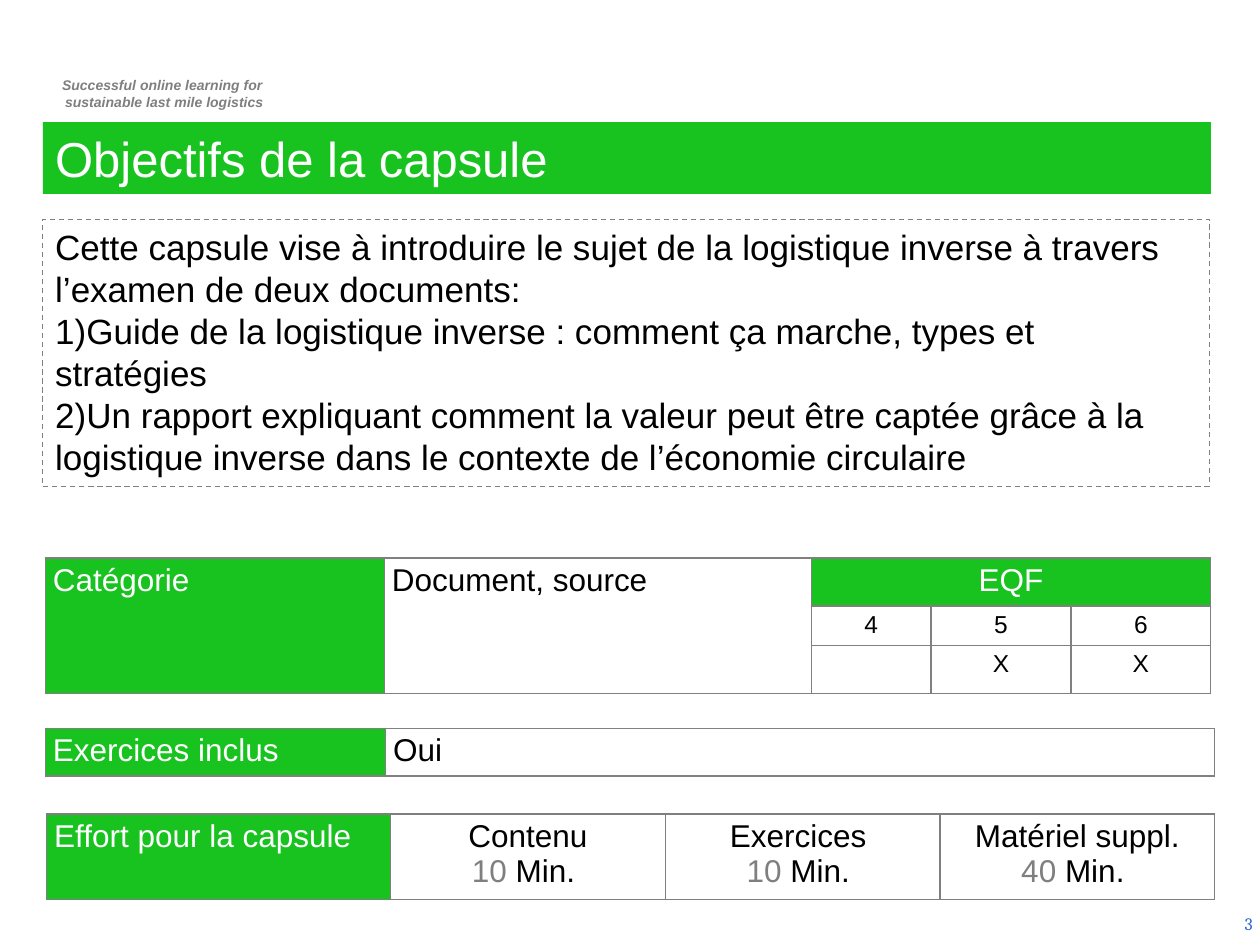
from dataclasses import dataclass

from lxml.etree import SubElement
from pptx import Presentation
from pptx.dml.color import RGBColor
from pptx.enum.dml import MSO_LINE
from pptx.enum.shapes import MSO_SHAPE
from pptx.enum.text import MSO_ANCHOR, PP_ALIGN
from pptx.oxml.ns import qn
from pptx.util import Inches, Pt


@dataclass(frozen=True)
class Theme:
    green: str = "18C320"
    white: str = "FFFFFF"
    black: str = "000000"
    gray: str = "808080"
    muted: str = "7F7F7F"
    blue: str = "3366CC"
    font: str = "Arial"
    number_font: str = "Cambria"
    title: int = 28
    body: int = 20
    cell: int = 18
    small_cell: int = 14
    number: int = 10
    tagline: int = 8


THEME = Theme()


def write_text(frame, paragraphs, size=THEME.cell, color=THEME.black, font=THEME.font,
               align=PP_ALIGN.LEFT, anchor=MSO_ANCHOR.TOP, bold=False, italic=False):
    """Each paragraph is a string or a list of (text, color) runs."""
    frame.word_wrap = True
    frame.vertical_anchor = anchor
    for index, content in enumerate(paragraphs):
        paragraph = frame.add_paragraph() if index else frame.paragraphs[0]
        paragraph.alignment = align
        runs = [(content, color)] if isinstance(content, str) else content
        for text, run_color in runs:
            run = paragraph.add_run()
            run.text = text
            run.font.name = font
            run.font.size = Pt(size)
            run.font.bold = bold
            run.font.italic = italic
            run.font.color.rgb = RGBColor.from_string(run_color)


class SlideBuilder:
    def __init__(self, slide, theme):
        self.slide = slide
        self.theme = theme

    def text(self, box, paragraphs, **text_format):
        shape = self.slide.shapes.add_textbox(*map(Inches, box))
        write_text(shape.text_frame, paragraphs, **text_format)

    def rectangle(self, box, paragraphs, fill=None, dashed=False, **text_format):
        shape = self.slide.shapes.add_shape(MSO_SHAPE.RECTANGLE, *map(Inches, box))
        shape.shadow.inherit = False
        if fill:
            shape.fill.solid()
            shape.fill.fore_color.rgb = RGBColor.from_string(fill)
        else:
            shape.fill.background()
        if dashed:
            shape.line.color.rgb = RGBColor.from_string(self.theme.gray)
            shape.line.width = Pt(0.75)
            shape.line.dash_style = MSO_LINE.DASH
        else:
            shape.line.fill.background()
        write_text(shape.text_frame, paragraphs, **text_format)

    def table(self, left, top, columns, rows, border):
        frame = self.slide.shapes.add_table(
            len(rows), len(columns), Inches(left), Inches(top),
            Inches(sum(columns)), Inches(sum(rows)))
        table = frame.table
        table.first_row = table.horz_banding = False
        for column, width in zip(table.columns, columns):
            column.width = Inches(width)
        for row, height in zip(table.rows, rows):
            row.height = Inches(height)
        for cell in table.iter_cells():
            cell.margin_left = cell.margin_right = Inches(0.06)
            cell.margin_top = cell.margin_bottom = Inches(0.04)
            self.borders(cell, border)
            cell.fill.background()
        return table

    def borders(self, cell, color):
        properties = cell._tc.get_or_add_tcPr()
        for side in ("a:lnL", "a:lnR", "a:lnT", "a:lnB"):
            line = SubElement(properties, qn(side), w=str(Pt(1)))
            fill = SubElement(line, qn("a:solidFill"))
            SubElement(fill, qn("a:srgbClr"), val=color)

    def cell(self, cell, paragraphs, **text_format):
        write_text(cell.text_frame, paragraphs, **text_format)

    def label(self, cell, text, **text_format):
        cell.fill.solid()
        cell.fill.fore_color.rgb = RGBColor.from_string(self.theme.green)
        self.cell(cell, [text], color=self.theme.white, **text_format)


def main():
    presentation = Presentation()
    presentation.slide_width = Inches(10)
    presentation.slide_height = Inches(7.5)
    slide = presentation.slides.add_slide(presentation.slide_layouts[6])
    builder = SlideBuilder(slide, THEME)

    # Tagline and slide number
    builder.text((0.29, 0.56, 2.03, 0.37),
                 ["Successful online learning for ", "sustainable last mile logistics"],
                 size=THEME.tagline, color=THEME.muted, bold=True, italic=True,
                 align=PP_ALIGN.CENTER)
    builder.text((7.71, 7.13, 2.33, 0.4), ["3"], size=THEME.number, color=THEME.blue,
                 font=THEME.number_font, align=PP_ALIGN.RIGHT, anchor=MSO_ANCHOR.MIDDLE)

    # Title and objectives
    builder.rectangle((0.34, 0.97, 9.27, 0.57), ["Objectifs de la capsule"],
                      fill=THEME.green, size=THEME.title, color=THEME.white)
    builder.rectangle((0.34, 1.74, 9.26, 2.12), [
        "Cette capsule vise à introduire le sujet de la logistique inverse à travers "
        "l’examen de deux documents:",
        "1)Guide de la logistique inverse : comment ça marche, types et stratégies",
        "2)Un rapport expliquant comment la valeur peut être captée grâce à la "
        "logistique inverse dans le contexte de l’économie circulaire",
    ], dashed=True, size=THEME.body)

    # Category and EQF levels
    category = builder.table(0.36, 4.43, [2.69, 3.39, 0.95, 1.11, 1.11],
                             [0.37, 0.31, 0.37], THEME.gray)
    for column in (0, 1):
        category.cell(0, column).merge(category.cell(2, column))
    category.cell(0, 2).merge(category.cell(0, 4))
    builder.label(category.cell(0, 0), "Catégorie")
    builder.cell(category.cell(0, 1), ["Document, source"])
    builder.label(category.cell(0, 2), "EQF", align=PP_ALIGN.CENTER)
    for column, (level, mark) in enumerate([("4", ""), ("5", "X"), ("6", "X")], start=2):
        builder.cell(category.cell(1, column), [level], size=THEME.small_cell,
                     align=PP_ALIGN.CENTER)
        if mark:
            builder.cell(category.cell(2, column), [mark], size=THEME.small_cell,
                         align=PP_ALIGN.CENTER)

    # Exercises included
    exercises = builder.table(0.36, 5.78, [2.7, 6.58], [0.37], THEME.gray)
    builder.label(exercises.cell(0, 0), "Exercices inclus")
    builder.cell(exercises.cell(0, 1), ["Oui"])

    # Effort in minutes
    effort = builder.table(0.37, 6.46, [2.73] + [2.18] * 3, [0.68], THEME.muted)
    builder.label(effort.cell(0, 0), "Effort pour la capsule")
    efforts = [("Contenu", 10), ("Exercices ", 10), ("Matériel suppl.", 40)]
    for column, (name, minutes) in enumerate(efforts, start=1):
        duration = [(f"{minutes} ", THEME.muted), ("Min. ", THEME.black)]
        builder.cell(effort.cell(0, column), [name, duration], align=PP_ALIGN.CENTER)

    presentation.save("out.pptx")


if __name__ == "__main__":
    main()
